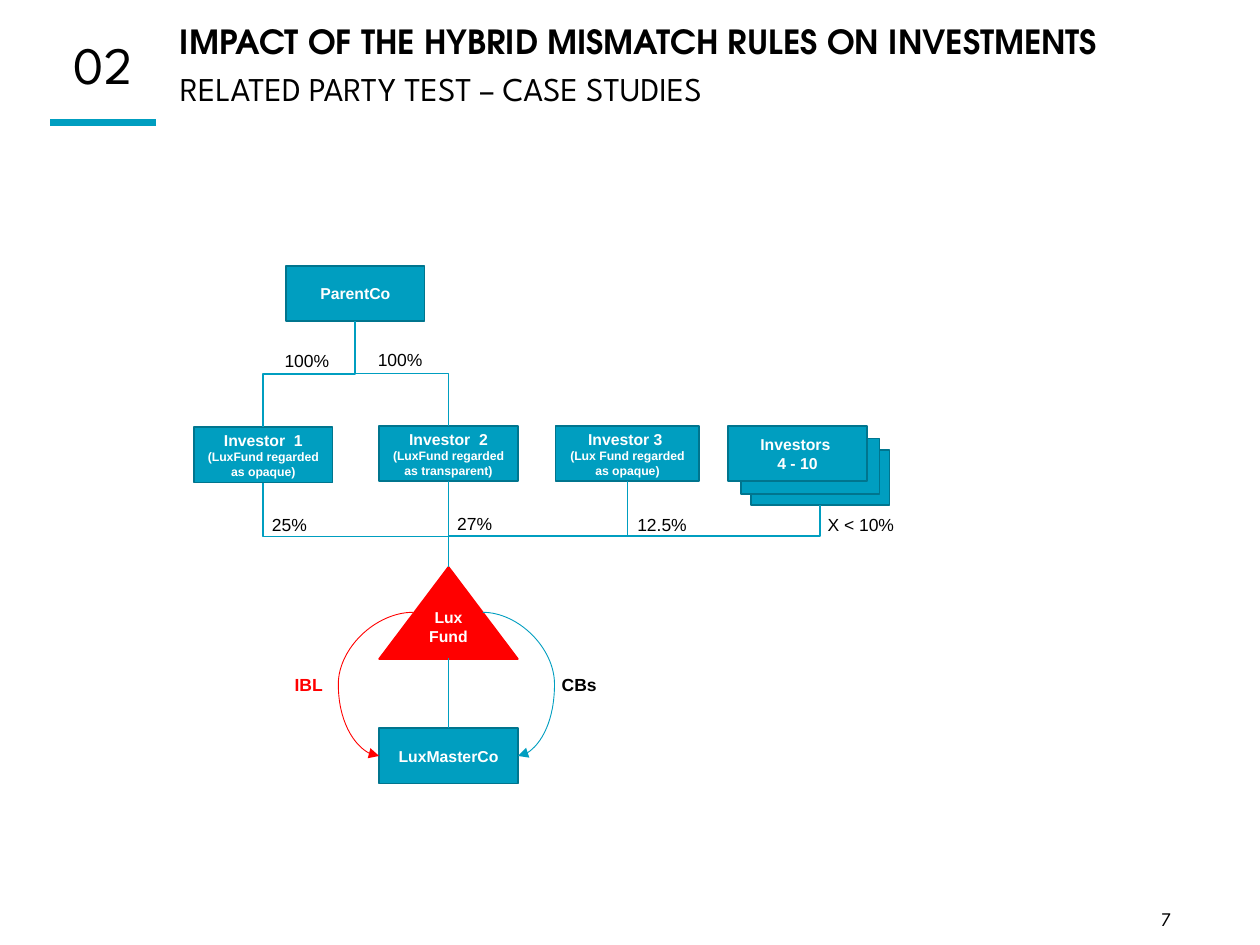
from dataclasses import dataclass

from lxml.etree import SubElement
from pptx import Presentation
from pptx.dml.color import RGBColor
from pptx.enum.shapes import MSO_CONNECTOR, MSO_SHAPE
from pptx.enum.text import MSO_ANCHOR, PP_ALIGN
from pptx.oxml.ns import qn
from pptx.util import Inches, Pt


@dataclass(frozen=True)
class Theme:
    teal: str = "009EC0"
    teal_edge: str = "00758E"
    red: str = "FF0000"
    black: str = "000000"
    white: str = "FFFFFF"
    body_font: str = "Arial"
    heading_font: str = "League Spartan"
    title_font: str = "TeX Gyre Adventor"
    number_size: float = 30
    title_size: float = 19
    page_size: float = 11
    label_size: float = 10
    entity_size: float = 9
    note_size: float = 7


THEME = Theme()
ENTITY_W, ENTITY_H = 1.1, 0.44
FUND_X, FUND_TOP, FUND_BOTTOM = 3.56, 4.5, 5.22
INVESTOR_TOP = 3.38


def write(paragraph, text, size=THEME.label_size, color=THEME.black, bold=False,
          font=THEME.body_font, align=PP_ALIGN.LEFT, spacing=None, before=None):
    """Append one formatted run to the paragraph."""
    run = paragraph.add_run()
    run.text = text
    run.font.size = Pt(size)
    run.font.name = font
    run.font.bold = bold
    run.font.color.rgb = RGBColor.from_string(color)
    paragraph.alignment = align
    if spacing:
        paragraph.line_spacing = spacing
    if before:
        paragraph.space_before = Pt(before)


def add_frame(slide, left, top, width, height, anchor=MSO_ANCHOR.TOP):
    box = slide.shapes.add_textbox(Inches(left), Inches(top), Inches(width), Inches(height))
    frame = box.text_frame
    frame.word_wrap = True
    frame.vertical_anchor = anchor
    return frame


def add_label(slide, text, left, top, width=0.59, **style):
    write(add_frame(slide, left, top, width, 0.27).paragraphs[0], text, **style)


def add_entity(slide, left, top, name="", note="", note_size=THEME.note_size,
               width=ENTITY_W, height=ENTITY_H, kind=MSO_SHAPE.RECTANGLE,
               fill=THEME.teal, edge=THEME.teal_edge):
    """Filled shape with a bold name and, on the next line, an optional note."""
    entity = slide.shapes.add_shape(kind, Inches(left), Inches(top), Inches(width), Inches(height))
    entity.shadow.inherit = False
    entity.fill.solid()
    entity.fill.fore_color.rgb = RGBColor.from_string(fill)
    entity.line.color.rgb = RGBColor.from_string(edge)
    entity.line.width = Pt(1)
    frame = entity.text_frame
    frame.word_wrap = True
    frame.vertical_anchor = MSO_ANCHOR.MIDDLE
    style = dict(color=THEME.white, bold=True, align=PP_ALIGN.CENTER)
    paragraph = frame.paragraphs[0]
    if name:
        write(paragraph, name, size=THEME.entity_size, **style)
    if note:
        paragraph.add_line_break()
        write(paragraph, note, size=note_size, **style)
    return entity


def add_link(slide, start, end, kind=MSO_CONNECTOR.STRAIGHT, color=THEME.teal,
             width=1, bend=None, arrow=False):
    link = slide.shapes.add_connector(kind, *map(Inches, start + end))
    link.line.color.rgb = RGBColor.from_string(color)
    link.line.width = Pt(width)
    properties = link._element.spPr
    SubElement(properties, qn("a:effectLst"))
    if arrow:
        SubElement(properties.find(qn("a:ln")), qn("a:tailEnd"), type="triangle")
    if bend is not None:
        geometry = properties.find(qn("a:prstGeom"))
        adjustments = geometry.find(qn("a:avLst"))
        if adjustments is None:
            adjustments = SubElement(geometry, qn("a:avLst"))
        SubElement(adjustments, qn("a:gd"), name="adj1", fmla=f"val {round(bend * 100000)}")
    return link


def add_branch(slide, start, end, bend=0.5):
    """Elbow that runs down, across and down: a horizontal elbow turned a quarter."""
    (x1, y1), (x2, y2) = start, end
    run, rise = y2 - y1, abs(x2 - x1)
    left, top = (x1 + x2 - run) / 2, (y1 + y2 - rise) / 2
    branch = add_link(slide, (left, top), (left + run, top + rise), MSO_CONNECTOR.ELBOW, bend=bend)
    transform = branch._element.spPr.find(qn("a:xfrm"))
    transform.set("rot", str((270 if x2 > x1 else 90) * 60000))
    if x2 > x1:
        transform.set("flipH", "1")


def add_header(slide):
    add_link(slide, (1.24, 0.97), (0.4, 0.97), width=4)
    number = add_frame(slide, 0.47, 0.27, 0.7, 0.53, MSO_ANCHOR.MIDDLE)
    write(number.paragraphs[0], "02", size=THEME.number_size, font=THEME.heading_font,
          align=PP_ALIGN.CENTER, spacing=0.9)
    title = add_frame(slide, 1.33, 0.27, 8.41, 0.53, MSO_ANCHOR.MIDDLE)
    write(title.paragraphs[0], "IMPACT OF THE HYBRID MISMATCH RULES ON INVESTMENTS",
          size=THEME.title_size, font=THEME.title_font, bold=True, spacing=0.9)
    write(title.add_paragraph(), "RELATED PARTY TEST – CASE STUDIES",
          size=THEME.title_size, font=THEME.heading_font, spacing=0.9, before=6)


def add_entities(slide):
    for left, top in ((5.96, 3.57), (5.88, 3.48)):
        add_entity(slide, left, top)
    add_entity(slide, 5.78, INVESTOR_TOP, "Investors ", "4 - 10", note_size=THEME.entity_size)
    add_entity(slide, 2.27, 2.11, "ParentCo")
    add_entity(slide, 1.54, 3.39, "Investor  1", "(LuxFund regarded as opaque)")
    add_entity(slide, 3.01, INVESTOR_TOP, "Investor  2", "(LuxFund regarded as transparent)")
    add_entity(slide, 4.41, INVESTOR_TOP, "Investor 3 ", "(Lux Fund regarded as opaque)", width=1.14)
    add_entity(slide, 3.01, 5.78, "LuxMasterCo")
    fund = add_entity(slide, 3.01, FUND_TOP, "Lux Fund", height=0.73,
                      kind=MSO_SHAPE.ISOSCELES_TRIANGLE, fill=THEME.red, edge=THEME.red)
    fund.text_frame.margin_bottom = Inches(0.2)


def add_links(slide):
    fund_tip, parent_foot = (FUND_X, FUND_TOP), (2.82, 2.55)
    add_link(slide, (FUND_X, FUND_BOTTOM), (FUND_X, 5.78))
    add_link(slide, (FUND_X, 3.82), fund_tip)
    for investor_head in ((FUND_X, INVESTOR_TOP), (2.09, 3.39)):
        add_branch(slide, parent_foot, investor_head)
    for investor_foot, bend in (((2.09, 3.83), 0.64), ((4.98, 3.82), 0.64), ((6.51, 4.01), 0.5)):
        add_branch(slide, investor_foot, fund_tip, bend)
    for start, end, color, bend in (((3.28, 4.86), (3.01, 6), THEME.red, 2.2),
                                    ((3.83, 4.86), (4.11, 6), THEME.teal, 2.04)):
        add_link(slide, start, end, MSO_CONNECTOR.CURVE, color, 0.5, bend, arrow=True)


def add_labels(slide):
    for share, left, top, width in (
        ("100%", 2.16, 2.73, 0.59),
        ("100%", 2.9, 2.72, 0.59),
        ("25%", 2.06, 4.03, 0.59),
        ("27%", 3.53, 4.02, 0.59),
        ("12.5%", 4.96, 4.03, 0.7),
        ("X < 10%", 6.47, 4.03, 0.95),
    ):
        add_label(slide, share, left, top, width)
    add_label(slide, "IBL", 2.24, 5.3, color=THEME.red, bold=True)
    add_label(slide, "CBs", 4.36, 5.3, bold=True)
    add_label(slide, "7", 8.96, 7.15, size=THEME.page_size, font=THEME.heading_font,
              align=PP_ALIGN.CENTER)


def main():
    presentation = Presentation()
    presentation.slide_width, presentation.slide_height = Inches(10), Inches(7.5)
    slide = presentation.slides.add_slide(presentation.slide_layouts[6])
    add_header(slide)
    add_entities(slide)
    add_links(slide)
    add_labels(slide)
    presentation.save("out.pptx")


if __name__ == "__main__":
    main()
